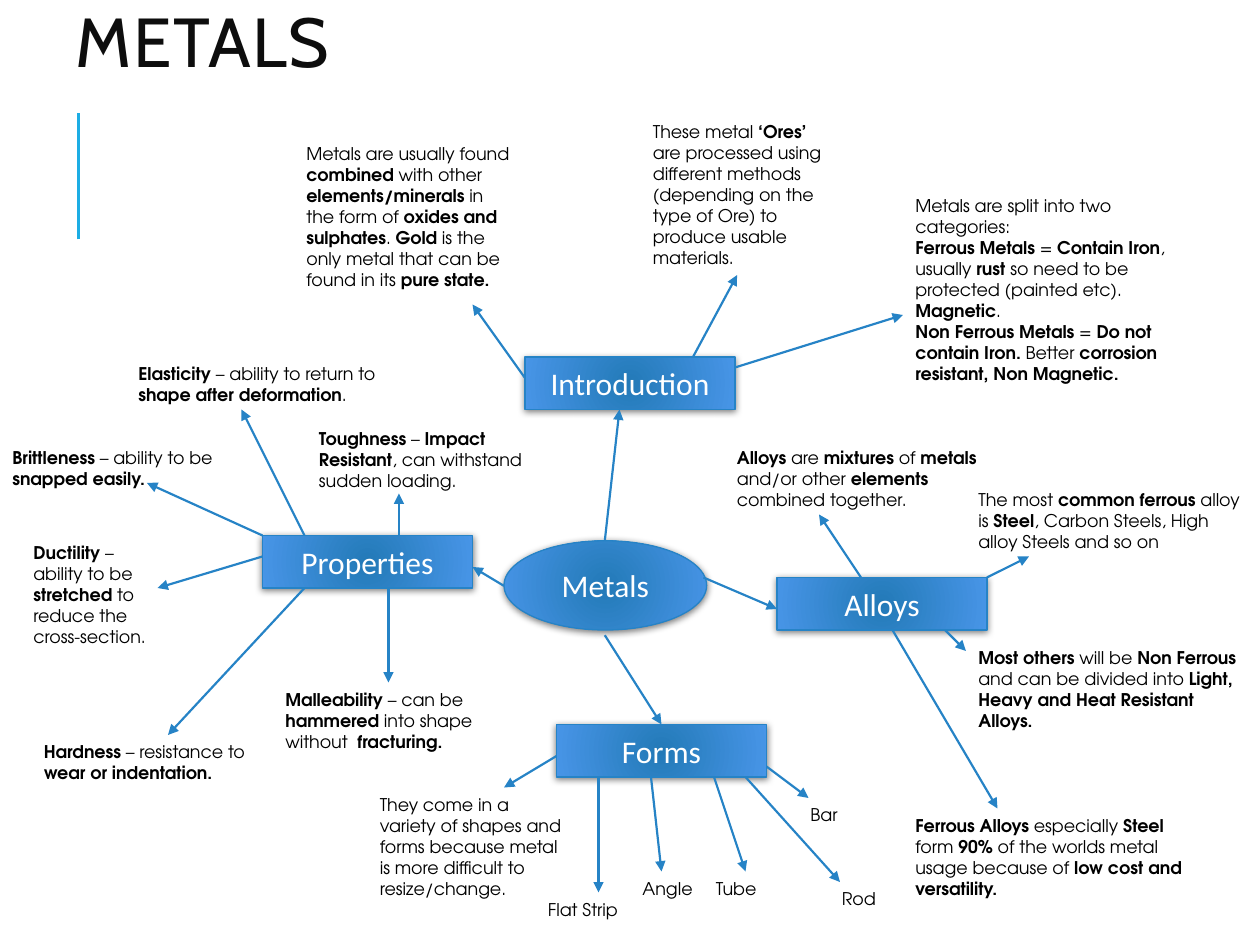
import pptx
import pptx.dml.color
import pptx.enum.shapes
import pptx.enum.text
import pptx.oxml
import pptx.oxml.ns
import pptx.util

Cm, Pt = pptx.util.Cm, pptx.util.Pt
RGBColor = pptx.dml.color.RGBColor
SHAPE = pptx.enum.shapes.MSO_SHAPE
ANCHOR = pptx.enum.text.MSO_ANCHOR
ALIGN = pptx.enum.text.PP_ALIGN
FIT = pptx.enum.text.MSO_AUTO_SIZE

BLACK = RGBColor(0x00, 0x00, 0x00)
WHITE = RGBColor(0xFF, 0xFF, 0xFF)
INK = RGBColor(0x0D, 0x0D, 0x0D)
BLUE = RGBColor(0x26, 0x83, 0xC6)
CYAN = RGBColor(0x1C, 0xAD, 0xE4)
DARK = RGBColor(0x23, 0x7A, 0xB8)
LIGHT = RGBColor(0x48, 0x95, 0xE7)

TITLE_FONT = {"name": "Cabin", "size": Pt(39.6), "bold": False}
NODE_FONT = {"name": "Calibri", "size": Pt(18)}
NOTE_FONT = {"name": "TeX Gyre Adventor", "size": Pt(10)}

NS = pptx.oxml.ns.nsdecls("a")
GRADIENT = (
    f'<a:gradFill {NS} rotWithShape="1"><a:gsLst>'
    f'<a:gs pos="0"><a:srgbClr val="{DARK}"/></a:gs>'
    f'<a:gs pos="100000"><a:srgbClr val="{LIGHT}"/></a:gs></a:gsLst>'
    '<a:path path="circle"><a:fillToRect l="100000" t="100000" r="100000" b="100000"/></a:path>'
    '</a:gradFill>')
SHADOW = (
    f'<a:outerShdw {NS} blurRad="50800" dist="12700" dir="5400000" rotWithShape="0">'
    '<a:srgbClr val="000000"><a:alpha val="50000"/></a:srgbClr></a:outerShdw>')


def grid(n):
    """The map sits on a grid of twelve units to the inch."""
    return Cm(n * 2.54 / 12)


def apply(target, values):
    for name, value in values.items():
        setattr(target, name, value)


class MindMap:
    def __init__(self, slide):
        self.slide = slide
        self.shapes = slide.shapes

    def run(self, p, text, font, color, bold=None):
        r = p.add_run()
        r.text = text
        apply(r.font, font)
        if bold is not None:
            r.font.bold = bold
        r.font.color.rgb = color
        return r

    def title(self, text):
        sp = self.shapes.title
        apply(sp, {"left": grid(6), "top": grid(0.6), "width": grid(108), "height": grid(7.8)})
        tf = sp.text_frame
        apply(tf, {"vertical_anchor": ANCHOR.MIDDLE, "auto_size": FIT.NONE, "word_wrap": True})
        p = tf.paragraphs[0]
        apply(p, {"alignment": ALIGN.LEFT, "line_spacing": 0.8})
        r = self.run(p, text, TITLE_FONT, INK)
        r.font._element.set("spc", "100")

    def line(self, x1, y1, x2, y2, color=BLUE, width=1.25, arrow=True):
        kind = pptx.enum.shapes.MSO_CONNECTOR.STRAIGHT
        cx = self.shapes.add_connector(kind, grid(x1), grid(y1), grid(x2), grid(y2))
        cx.line.color.rgb = color
        cx.line.width = Pt(width)
        if arrow:
            cx.line._get_or_add_ln().append(
                pptx.oxml.parse_xml(f'<a:tailEnd {NS} type="triangle"/>'))
        cx._element.spPr.append(pptx.oxml.parse_xml(f"<a:effectLst {NS}/>"))

    def node(self, text, x, y, w=20, h=5, kind=SHAPE.RECTANGLE):
        sp = self.shapes.add_shape(kind, grid(x), grid(y), grid(w), grid(h))
        sp.fill.background()
        spPr = sp._element.spPr
        no_fill = spPr.find(pptx.oxml.ns.qn("a:noFill"))
        spPr.replace(no_fill, pptx.oxml.parse_xml(GRADIENT))
        sp.line.color.rgb = BLUE
        sp.line.width = Pt(0.75)
        sp.shadow.inherit = False
        effects = spPr.find(pptx.oxml.ns.qn("a:effectLst"))
        effects.append(pptx.oxml.parse_xml(SHADOW))
        tf = sp.text_frame
        apply(tf, {"word_wrap": False, "vertical_anchor": ANCHOR.MIDDLE})
        p = tf.paragraphs[0]
        p.alignment = ALIGN.CENTER
        self.run(p, text, NODE_FONT, WHITE)

    def note(self, x, y, w, lines, *paragraphs):
        """Text between double asterisks is bold."""
        sp = self.shapes.add_textbox(grid(x), grid(y), grid(w), grid(2 * lines + 1.2))
        tf = sp.text_frame
        apply(tf, {"word_wrap": True, "auto_size": FIT.SHAPE_TO_FIT_TEXT})
        for i, text in enumerate(paragraphs):
            p = tf.add_paragraph() if i else tf.paragraphs[0]
            for j, part in enumerate(text.split("**")):
                if part:
                    self.run(p, part, NOTE_FONT, BLACK, bold=j % 2 == 1)


# Arrows, from tail to head, in grid units
ARROWS = [
    # centre to branches
    (57.6, 51.5, 59, 39), (67, 55, 74, 58), (57.6, 60.5, 63, 69), (48, 55.8, 45, 54),
    # introduction
    (50, 36, 45, 29), (66, 34, 70.2, 26.2), (70, 35, 86, 30),
    # alloys
    (82, 55, 78, 49), (94, 55, 98, 53), (90, 60, 92, 62), (85, 60, 95, 77),
    # forms
    (53, 72, 48, 75), (57, 74, 57, 85), (62, 74, 63, 83),
    (68, 74, 71, 83), (71, 74, 80, 84), (73, 73, 77, 76),
    # properties
    (29, 51, 23, 39), (38, 51, 38, 47), (25, 51, 14, 46),
    (25, 53, 15, 56), (29, 56, 16, 70), (37, 56, 37, 65),
]

# Notes: left, top, width, line count, paragraphs
NOTES = [
    # introduction
    (28, 13, 22.3, 7, "Metals are usually found **combined** with other **elements/minerals** in the "
     "form of **oxides and sulphates**. **Gold** is the only metal that can be found in its "
     "**pure state.**"),
    (61, 10.9, 19.4, 7, "These metal **‘Ores’** are processed using different methods (depending on "
     "the type of Ore) to produce usable materials."),
    (86, 18, 28, 9, "Metals are split into two categories:",
     "**Ferrous Metals** = **Contain Iron**, usually **rust** so need to be protected "
     "(painted etc). **Magnetic**.",
     "**Non Ferrous Metals** = **Do not contain Iron.** Better** corrosion resistant, "
     "Non Magnetic.**"),
    # alloys
    (69, 42, 28, 3, "**Alloys** are** mixtures** of **metals **and/or other** elements **"
     "combined together."),
    (92, 46, 28, 3, "The most **common ferrous** alloy is **Steel**, Carbon Steels, High alloy "
     "Steels and so on"),
    (92, 61, 28, 4, "**Most others** will be **Non Ferrous** and can be divided into **Light, Heavy "
     "and Heat Resistant Alloys.**"),
    (86, 77, 28, 4, "**Ferrous Alloys** especially** Steel **form **90%** of the worlds metal usage "
     "because of **low cost and versatility.**"),
    # forms
    (35, 75, 20.4, 5, "They come in a variety of shapes and forms because metal is more difficult "
     "to resize/change."),
    (51, 85, 20.4, 1, "Flat Strip"),
    (60, 83, 20.4, 1, "Angle"),
    (67, 83, 20.4, 1, "Tube"),
    (79, 84, 20.4, 1, "Rod"),
    (76, 76, 20.4, 1, "Bar"),
    # properties
    (12, 34, 25, 2, "**Elasticity** – ability to return to **shape after deformation**."),
    (29.2, 40.2, 23, 3, "**Toughness** – **Impact Resistant**, can withstand sudden loading."),
    (0, 42, 23, 2, "**Brittleness** – ability to be **snapped easily.**"),
    (2, 51, 15, 5, "**Ductility** – ability to be **stretched** to reduce the cross-section."),
    (3, 70, 23, 2, "**Hardness** – resistance to **wear or indentation.**"),
    (26, 65, 23, 3, "**Malleability** – can be **hammered** into shape without  **fracturing.**"),
]

BRANCHES = [("Introduction", 50, 34), ("Alloys", 74, 55), ("Forms", 53, 69), ("Properties", 25, 51)]


def main():
    prs = pptx.Presentation()
    prs.slide_width, prs.slide_height = Cm(25.4), Cm(19.05)
    s = MindMap(prs.slides.add_slide(prs.slide_layouts[5]))

    # Title and side rule
    s.title("METALS")
    s.line(7.5, 22.8, 7.5, 10.8, color=CYAN, width=1.5, arrow=False)

    # Centre and branches
    s.node("Metals", 48, 51.5, 19.3, 8.5, SHAPE.OVAL)
    for branch in BRANCHES:
        s.node(*branch)

    # Arrows and notes
    for arrow in ARROWS:
        s.line(*arrow)
    for note in NOTES:
        s.note(*note)

    prs.save("out.pptx")


if __name__ == "__main__":
    main()
